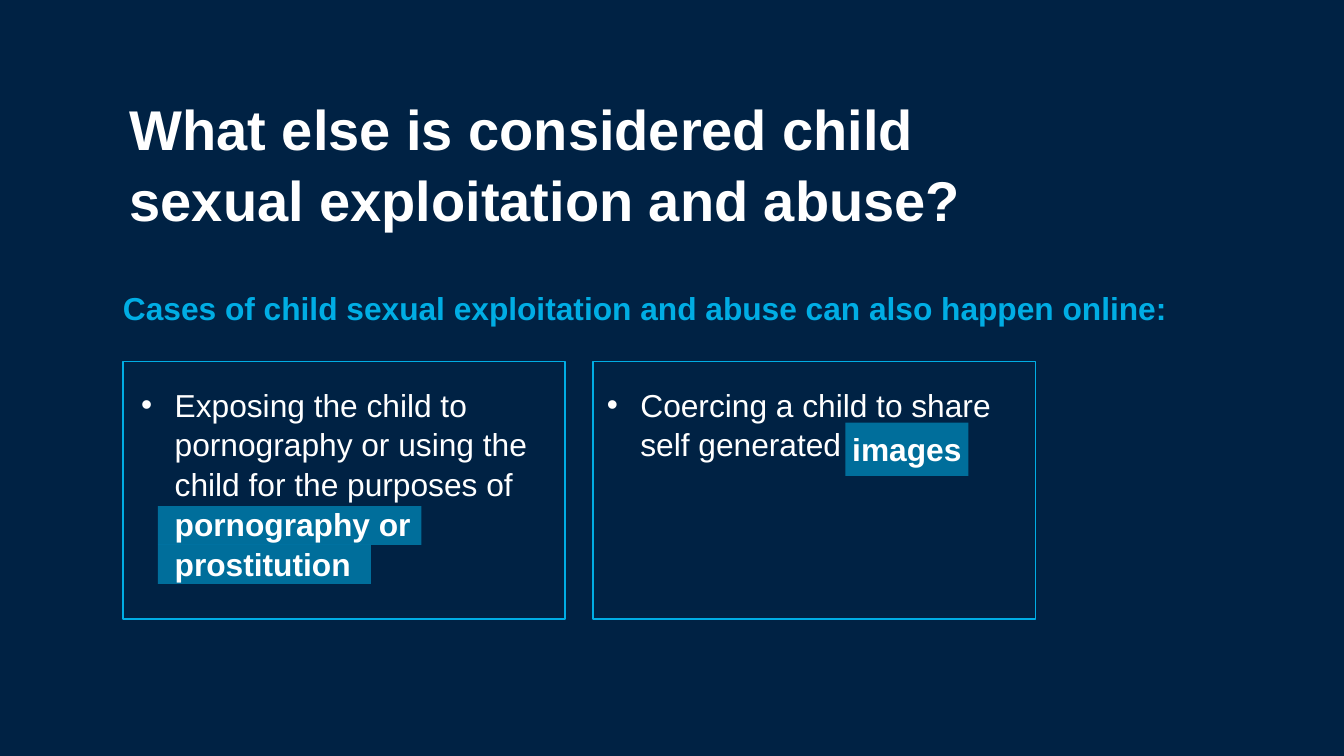
from lxml import etree
from pptx import Presentation
from pptx import util as u
from pptx.dml.color import RGBColor
from pptx.enum import shapes, text
from pptx.oxml.ns import qn

NAVY = RGBColor(0x00, 0x22, 0x44)
CYAN = RGBColor(0x00, 0xAD, 0xE4)
WHITE = RGBColor(0xFF, 0xFF, 0xFF)
FONT = "Arial"

# Content: each run is (words, bold); "\n" is a line break
TITLE = "What else is considered child sexual exploitation and abuse?"
LEAD = "Cases of child sexual exploitation and abuse can also happen online:"
CASES = [
    [("Exposing the child to pornography or using the \nchild for the purposes of ", False),
     ("pornography or prostitution", True)],
    [("Coercing a child to share self generated", False)],
]
HIGHLIGHTED_WORD = "images"

# Grid in inches
LEFT, CARD_TOP, CARD_W, CARD_H, PITCH = 1.83, 5.38, 6.58, 3.83, 7
TEXT_TOP = 5.71
CASE_BOXES = [(2.1, TEXT_TOP, 6.42, 2.97), (9.03, TEXT_TOP, 6.13, 1.16)]
BAR_H = 0.58
LINE_BARS = [(2.35, 7.53 + row * BAR_H, width, BAR_H) for row, width in enumerate((3.92, 3.17))]
WORD_BAR = (12.58, 6.29, 1.83, 0.79)


def inches(place):
    return [u.Inches(value) for value in place]


def add_span(para, words, size, color, bold):
    for index, part in enumerate(words.split("\n")):
        if index:
            para.add_line_break()
        span = para.add_run()
        span.text = part
        span.font.name, span.font.size = FONT, u.Pt(size)
        span.font.bold, span.font.color.rgb = bold, color


def add_body(place, runs, color, bullet=False):
    frame = slide.shapes.add_textbox(*inches(place)).text_frame
    frame.word_wrap = True
    frame.margin_left = frame.margin_right = frame.margin_top = frame.margin_bottom = 0
    para = frame.paragraphs[0]
    para.line_spacing, para.space_after = u.Pt(42.6), u.Pt(30)
    if bullet:
        props = para._p.get_or_add_pPr()
        props.set("marL", str(u.Inches(0.5)))
        props.set("indent", str(u.Inches(-0.5)))
        etree.SubElement(props, qn("a:buFont"), typeface=FONT)
        etree.SubElement(props, qn("a:buChar"), char="•")
    for words, bold in runs:
        add_span(para, words, 34, color, bold)


def add_rectangle(place):
    box = slide.shapes.add_shape(shapes.MSO_SHAPE.RECTANGLE, *inches(place))
    box.shadow.inherit = False
    return box


def add_highlight(place):
    bar = add_rectangle(place)
    bar.fill.solid()
    bar.fill.fore_color.rgb = CYAN
    bar.line.fill.background()
    color = bar._element.spPr.find(qn("a:solidFill"))[0]
    etree.SubElement(color, qn("a:alpha"), val="55000")
    return bar


deck = Presentation()
deck.slide_width, deck.slide_height = u.Inches(20), u.Inches(11.25)
slide = deck.slides.add_slide(deck.slide_layouts[5])
slide.background.fill.solid()
slide.background.fill.fore_color.rgb = NAVY

# Title
title = slide.shapes.title
title.left, title.top, title.width, title.height = inches((LEFT, 1.3, 12.58, 2.12))
title.text_frame.word_wrap = True
title.text_frame.auto_size = text.MSO_AUTO_SIZE.NONE
title.text_frame.vertical_anchor = text.MSO_ANCHOR.TOP
heading = title.text_frame.paragraphs[0]
heading.alignment, heading.line_spacing = text.PP_ALIGN.LEFT, 1.06
add_span(heading, TITLE, 60, WHITE, True)

# Lead sentence
add_body((LEFT, 4.27, 15.71, 0.56), [(LEAD, True)], CYAN)

# Highlights behind the bold words
for place in LINE_BARS:
    add_highlight(place)
word_bar = add_highlight(WORD_BAR)
word_bar.text_frame.vertical_anchor = text.MSO_ANCHOR.MIDDLE
word = word_bar.text_frame.paragraphs[0]
word.alignment = text.PP_ALIGN.CENTER
add_span(word, HIGHLIGHTED_WORD, 34, WHITE, True)

# Cases and their outlined cards
for column, (place, runs) in enumerate(zip(CASE_BOXES, CASES)):
    add_body(place, runs, WHITE, bullet=True)
    card = add_rectangle((LEFT + column * PITCH, CARD_TOP, CARD_W, CARD_H))
    card.fill.background()
    card.line.color.rgb, card.line.width = CYAN, u.Pt(2)

deck.save("out.pptx")
